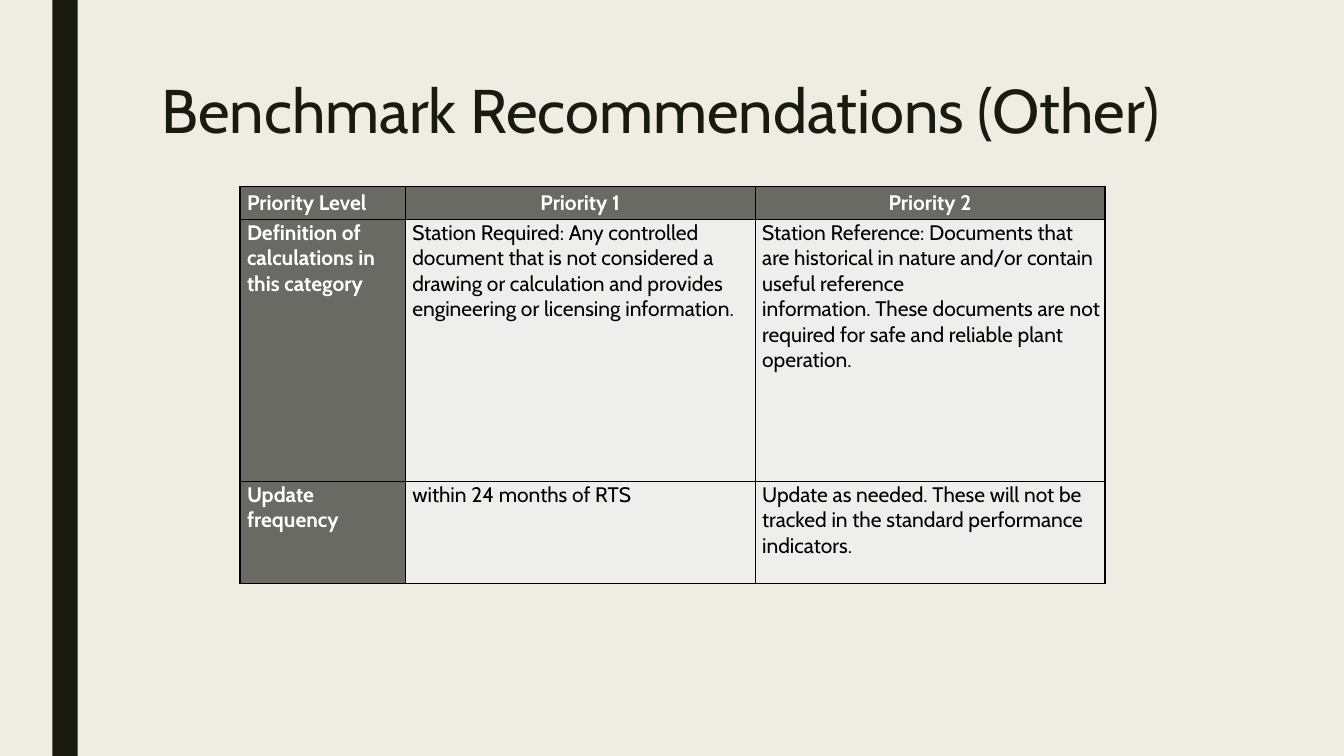
from lxml import etree
from pptx import Presentation
from pptx.dml.color import RGBColor
from pptx.enum.shapes import MSO_SHAPE
from pptx.enum.text import MSO_ANCHOR, PP_ALIGN
from pptx.oxml.ns import qn
from pptx.util import Inches, Pt

RECT = MSO_SHAPE.RECTANGLE
TOP, MIDDLE = MSO_ANCHOR.TOP, MSO_ANCHOR.MIDDLE
LEFT, CENTER = PP_ALIGN.LEFT, PP_ALIGN.CENTER
FONT = "Cabin"
COLORS = {"back": "EFEDE3", "dark": "191B0E", "head": "696A64",
          "body": "EEEEED", "white": "FFFFFF", "black": "000000"}


def color(name):
    return RGBColor.from_string(COLORS[name])


def add_border(cell):
    props = cell._tc.get_or_add_tcPr()
    for spot, side in enumerate(("lnL", "lnR", "lnT", "lnB")):
        line = etree.Element(qn("a:" + side), w=str(Pt(1)))
        fill = etree.SubElement(line, qn("a:solidFill"))
        etree.SubElement(fill, qn("a:srgbClr"), val=COLORS["black"])
        props.insert(spot, line)


prs = Presentation()
prs.slide_width = Inches(13.33)
prs.slide_height = Inches(7.5)
slide = prs.slides.add_slide(prs.slide_layouts[5])
slide.background.fill.solid()
slide.background.fill.fore_color.rgb = color("back")

bar = slide.shapes.add_shape(RECT, Inches(0.52), 0, Inches(0.25), Inches(7.5))
bar.shadow.inherit = False
bar.fill.solid()
bar.fill.fore_color.rgb = color("dark")
bar.line.fill.background()

title = slide.shapes.title
title.left, title.top = Inches(1.5), Inches(0.75)
title.width, title.height = Inches(10.5), Inches(1.62)
frame = title.text_frame
frame.word_wrap = True
frame.vertical_anchor = TOP
para = frame.paragraphs[0]
para.text = "Benchmark Recommendations (Other)"
para.alignment = LEFT
para.line_spacing = 0.89
para.font.name = FONT
para.font.size = Pt(44)
para.font.color.rgb = color("dark")

rows = [
    ("Priority Level", "Priority 1", "Priority 2"),
    ("Definition of calculations in this category",
     "Station Required: Any controlled document that is not considered a "
     "drawing or calculation and provides engineering or licensing information.",
     "Station Reference: Documents that are historical in nature and/or contain "
     "useful reference\ninformation. These documents are not required for safe "
     "and reliable plant operation."),
    ("Update frequency", "within 24 months of RTS",
     "Update as needed. These will not be tracked in the standard performance "
     "indicators."),
]
widths = (1.64, 3.47, 3.47)
heights = (0.33, 2.6, 1.01)
table = slide.shapes.add_table(len(rows), len(widths), Inches(2.38), Inches(1.85),
                               Inches(sum(widths)), Inches(sum(heights))).table
for col, width in zip(table.columns, widths):
    col.width = Inches(width)
for row, height in zip(table.rows, heights):
    row.height = Inches(height)

for r, texts in enumerate(rows):
    for c, text in enumerate(texts):
        cell = table.cell(r, c)
        head = r == 0 or c == 0
        cell.margin_left = cell.margin_right = 0
        cell.margin_top = cell.margin_bottom = 0
        cell.vertical_anchor = MIDDLE if r == 0 else TOP
        cell.fill.solid()
        cell.fill.fore_color.rgb = color("head" if head else "body")
        add_border(cell)
        para = cell.text_frame.paragraphs[0]
        para.text = text
        if r == 0 and c > 0:
            para.alignment = CENTER
        else:
            para.alignment = LEFT
            para._p.get_or_add_pPr().set("marL", str(Inches(0.07)))
        para.font.name = FONT
        para.font.size = Pt(15)
        para.font.bold = head
        para.font.color.rgb = color("white" if head else "black")

prs.save("out.pptx")
